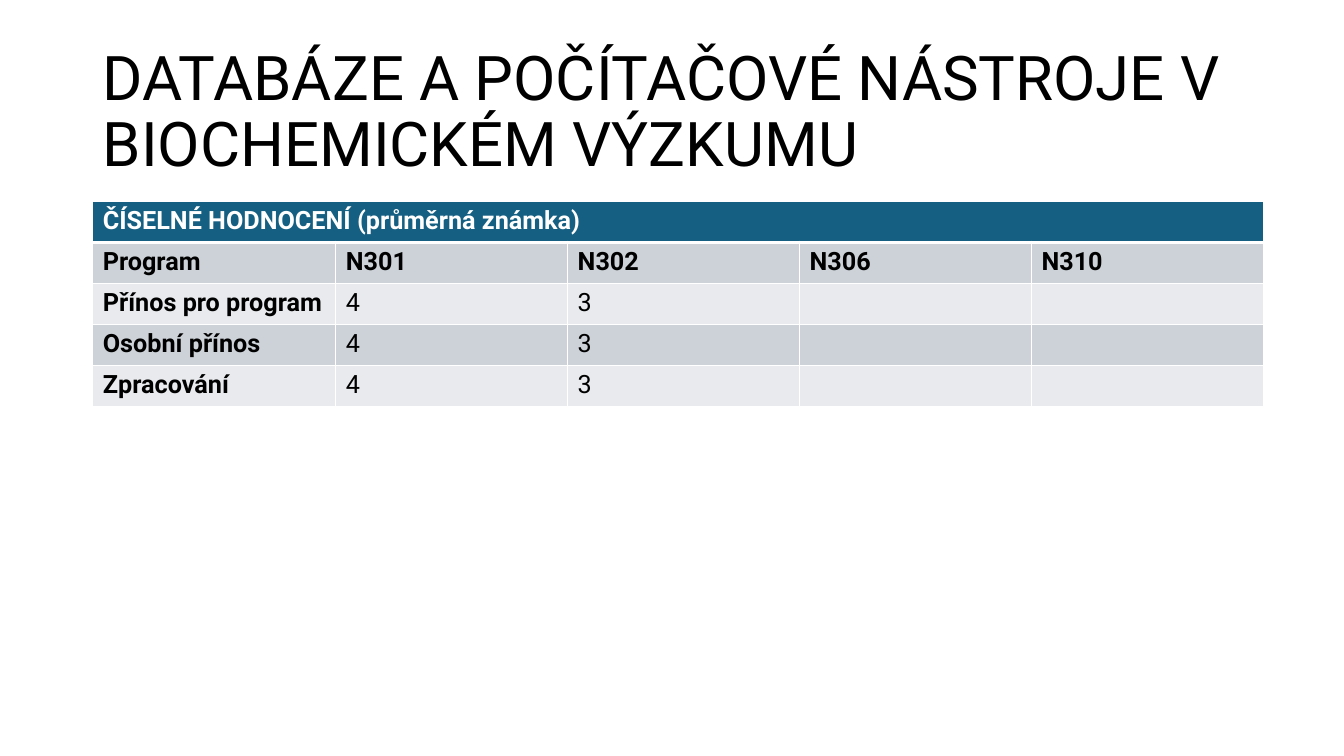
from lxml.etree import SubElement
from pptx import Presentation
from pptx.dml.color import RGBColor
from pptx.enum.text import MSO_ANCHOR, MSO_AUTO_SIZE, PP_ALIGN
from pptx.oxml.ns import qn
from pptx.util import Inches, Pt

WIDTH, HEIGHT = 13.33, 7.5
COLORS = {"ink": "000000", "paper": "FFFFFF", "heading": "156082",
          "dark_band": "CCD2D8", "light_band": "E8EAED"}


class SlideBuilder:
    """Style and current slide; places are shares of the slide's size."""

    font_name = "Roboto"

    def __init__(self, slide):
        self.slide = slide

    def box(self, left, top, width, height):
        return [Inches(share * side) for share, side in
                zip((left, top, width, height), (WIDTH, HEIGHT) * 2)]

    def set_text(self, paragraph, text, size, color="ink", bold=False):
        paragraph.text = text
        font = paragraph.font
        font.name, font.size, font.bold = self.font_name, Pt(size), bold
        font.color.rgb = RGBColor.from_string(COLORS[color])

    def title(self, text, place):
        heading = self.slide.shapes.title
        heading.left, heading.top, heading.width, heading.height = self.box(*place)
        frame = heading.text_frame
        frame.auto_size = MSO_AUTO_SIZE.NONE
        frame.word_wrap = True
        frame.vertical_anchor = MSO_ANCHOR.MIDDLE
        paragraph = frame.paragraphs[0]
        self.set_text(paragraph, text, 44)
        paragraph.alignment = PP_ALIGN.LEFT
        paragraph.line_spacing = 0.9

    def borders(self, cell, bottom=1, top=1):
        properties = cell._tc.get_or_add_tcPr()
        for side, width in (("L", 1), ("R", 1), ("T", top), ("B", bottom)):
            line = SubElement(properties, qn(f"a:ln{side}"), w=str(Pt(width)))
            fill = SubElement(line, qn("a:solidFill"))
            SubElement(fill, qn("a:srgbClr"), val=COLORS["paper"])

    def table(self, caption, rows, place, column_widths):
        grid = self.slide.shapes.add_table(
            len(rows) + 1, len(column_widths), *self.box(*place)).table
        for column, width in zip(grid.columns, column_widths):
            column.width = Inches(width)

        # Caption row across all columns, then alternating bands
        for r, values in enumerate([[caption]] + rows):
            band = "heading" if r == 0 else "dark_band" if r % 2 else "light_band"
            for c, cell in enumerate(grid.rows[r].cells):
                self.borders(cell, bottom=3 if r == 0 else 1, top=3 if r == 1 else 1)
                cell.fill.solid()
                cell.fill.fore_color.rgb = RGBColor.from_string(COLORS[band])
                self.set_text(cell.text_frame.paragraphs[0],
                              values[c] if c < len(values) else "", 18,
                              color="paper" if r == 0 else "ink",
                              bold=r < 2 or c == 0)
        grid.cell(0, 0).merge(grid.cell(0, len(column_widths) - 1))


def main():
    presentation = Presentation()
    presentation.slide_width, presentation.slide_height = Inches(WIDTH), Inches(HEIGHT)
    title_only = presentation.slide_layouts[5]
    builder = SlideBuilder(presentation.slides.add_slide(title_only))

    # Course name
    builder.title("DATABÁZE A POČÍTAČOVÉ NÁSTROJE V BIOCHEMICKÉM VÝZKUMU",
                  (0.92 / WIDTH, 0.4 / HEIGHT, 11.5 / WIDTH, 1.45 / HEIGHT))

    # Average marks by study program
    marks = [["Program", "N301", "N302", "N306", "N310"]]
    marks += [[criterion, "4", "3"] for criterion in
              ("Přínos pro program", "Osobní přínos", "Zpracování")]
    builder.table("ČÍSELNÉ HODNOCENÍ (průměrná známka)", marks,
                  (0.92 / WIDTH, 2 / HEIGHT, 11.61 / WIDTH, 2.03 / HEIGHT),
                  [2.41] + [2.3] * 4)

    presentation.save("out.pptx")


if __name__ == "__main__":
    main()
